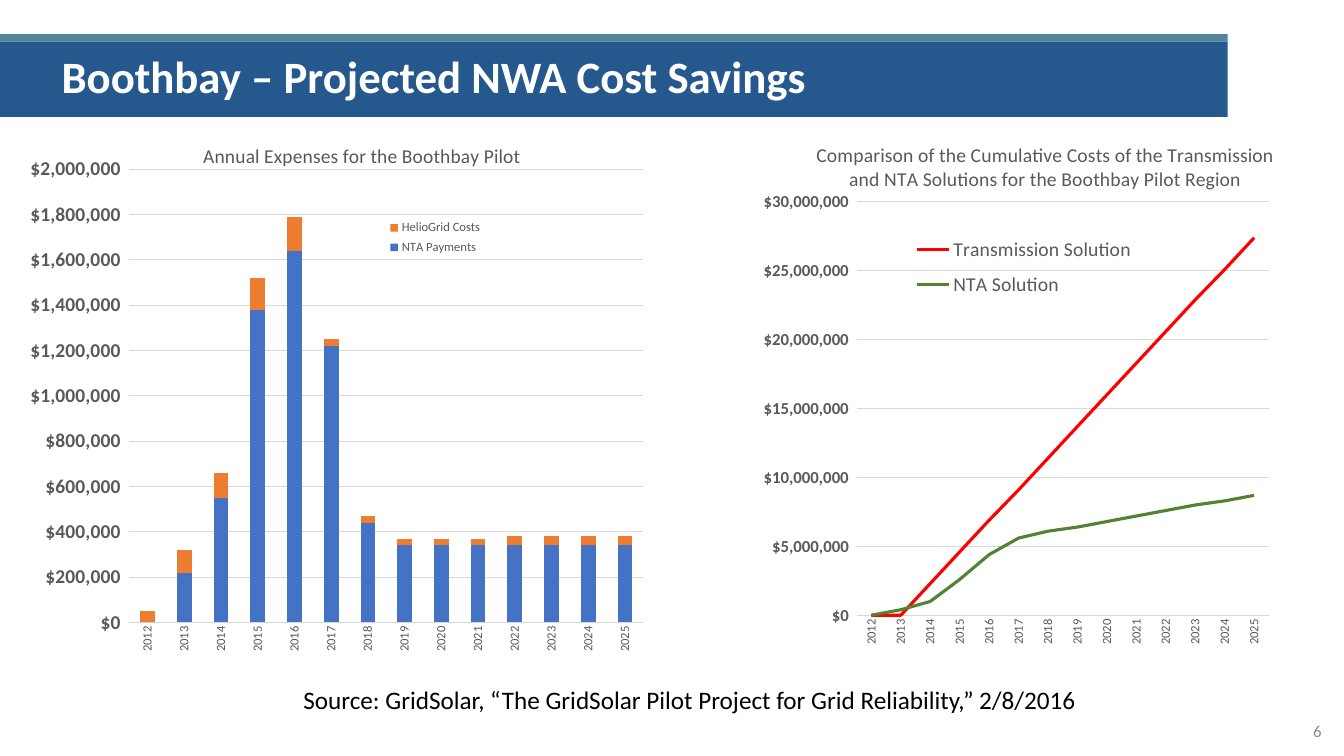
from pptx import Presentation
from pptx import util as u
from pptx.chart.data import CategoryChartData
from pptx.dml.color import RGBColor
from pptx.enum import chart as charts, shapes, text
from pptx.oxml import parse_xml
from pptx.oxml.ns import nsdecls

YEARS = [str(year) for year in range(2012, 2026)]
MONEY = '"$"#,##0_);[Red]\\("$"#,##0\\)'
GREY, RULE, WHITE, BLACK = "595959", "D9D9D9", "FFFFFF", "000000"


def color(value):
    return RGBColor.from_string(value)


class Deck:
    """Draws styled elements on the current slide, placed on a 100 by 100 grid."""

    face = "Calibri"

    def __init__(self, width, height):
        self.show = Presentation()
        self.show.slide_width, self.show.slide_height = u.Inches(width), u.Inches(height)
        self.slide = self.show.slides.add_slide(self.show.slide_layouts[5])

    def place(self, left, top, width, height):
        column, row = self.show.slide_width / 100, self.show.slide_height / 100
        return [round(n) for n in (left * column, top * row, width * column, height * row)]

    def style(self, font, size, tone, bold=False):
        font.name, font.size, font.bold = self.face, u.Pt(size), bold
        font.color.rgb = color(tone)

    def words(self, paragraph, wording, size, tone, bold=False):
        run = paragraph.add_run()
        run.text = wording
        self.style(run.font, size, tone, bold)

    def band(self, area, tone):
        band = self.slide.shapes.add_shape(shapes.MSO_SHAPE.RECTANGLE, *self.place(*area))
        band.shadow.inherit = False
        band.fill.solid()
        band.fill.fore_color.rgb = color(tone)
        band.line.fill.background()

    def heading(self, area, wording):
        heading = self.slide.shapes.title
        heading.left, heading.top, heading.width, heading.height = self.place(*area)
        frame = heading.text_frame
        frame.auto_size = text.MSO_AUTO_SIZE.NONE
        frame.vertical_anchor = text.MSO_ANCHOR.MIDDLE
        frame.paragraphs[0].alignment = text.PP_ALIGN.LEFT
        frame.paragraphs[0].line_spacing = 0.9
        self.words(frame.paragraphs[0], wording, 32, WHITE, True)
        heading.element.getparent().append(heading.element)

    def note(self, area, wording, size, tone, align=text.PP_ALIGN.LEFT, anchor=text.MSO_ANCHOR.TOP):
        frame = self.slide.shapes.add_textbox(*self.place(*area)).text_frame
        frame.word_wrap = True
        frame.vertical_anchor = anchor
        frame.paragraphs[0].alignment = align
        self.words(frame.paragraphs[0], wording, size, tone)

    def pin(self, chart, part, index, percents):
        parent = chart.element.xpath(f".//c:{part}")[0]
        for old in parent.xpath("./c:layout"):
            parent.remove(old)
        target = '<c:layoutTarget val="inner"/>' if part == "plotArea" else ""
        modes = '<c:xMode val="edge"/><c:yMode val="edge"/>'
        values = "".join(f'<c:{key} val="{percent / 100}"/>' for key, percent in zip("xywh", percents))
        parent.insert(index, parse_xml(
            f'<c:layout {nsdecls("c")}><c:manualLayout>{target}{modes}{values}'
            "</c:manualLayout></c:layout>"))

    def chart(self, kind, area, title, title_at, plot, legend, legend_size, axis, series):
        data = CategoryChartData(number_format=MONEY)
        data.categories = YEARS
        for name, tone, values in series:
            data.add_series(name, values)
        chart = self.slide.shapes.add_chart(kind, *self.place(*area), data).chart
        self.style(chart.font, 10, BLACK)

        chart.has_title = True
        frame = chart.chart_title.text_frame
        for number, wording in enumerate(title):
            line = frame.add_paragraph() if number else frame.paragraphs[0]
            self.words(line, wording, 14, GREY)
        chart.has_legend = True
        chart.legend.position = charts.XL_LEGEND_POSITION.RIGHT
        chart.legend.include_in_layout = False
        self.style(chart.legend.font, legend_size, GREY)
        self.pin(chart, "title", 1, title_at)
        self.pin(chart, "plotArea", 0, plot)
        self.pin(chart, "legend", 1, legend)

        top, step, size = axis
        years, dollars = chart.category_axis, chart.value_axis
        for scale in (years, dollars):
            scale.major_tick_mark = scale.minor_tick_mark = charts.XL_TICK_MARK.NONE
        dollars.minimum_scale, dollars.maximum_scale, dollars.major_unit = 0, top, step
        dollars.tick_labels.number_format = MONEY
        dollars.tick_labels.number_format_is_linked = False
        dollars.format.line.fill.background()
        self.style(dollars.tick_labels.font, size, GREY, True)
        self.style(years.tick_labels.font, 9, GREY)
        chart.element.xpath(".//c:catAx/c:txPr/a:bodyPr")[0].set("rot", "-5400000")
        for rule in (years.format.line, dollars.major_gridlines.format.line):
            rule.color.rgb, rule.width = color(RULE), u.Pt(0.75)

        drawn = chart.plots[0]
        drawn.vary_by_categories = False
        if kind == charts.XL_CHART_TYPE.COLUMN_STACKED:
            drawn.gap_width, drawn.overlap = 150, 100
        for item, (name, tone, values) in zip(drawn.series, series):
            if kind == charts.XL_CHART_TYPE.LINE:
                item.smooth = False
                item.format.line.color.rgb, item.format.line.width = color(tone), u.Pt(2.25)
            else:
                item.format.fill.solid()
                item.format.fill.fore_color.rgb = color(tone)


def main():
    deck = Deck(13.33, 7.5)
    deck.band((0, 5.47, 91.35, 10), "25598D")
    deck.band((0, 4.53, 91.35, 0.93), "52849E")
    deck.heading((3.83, 5.47, 84, 10), "Boothbay – Projected NWA Cost Savings")
    deck.note((76.58, 94, 22.5, 5.33), "6", 12, "8C8C8C",
              text.PP_ALIGN.RIGHT, text.MSO_ANCHOR.MIDDLE)

    payments = [0, 220000, 550000, 1380000, 1640000, 1220000, 440000] + [340000] * 7
    costs = [50000, 100000, 110000, 140000, 150000] + [30000] * 5 + [40000] * 4
    deck.chart(
        charts.XL_CHART_TYPE.COLUMN_STACKED, (2.25, 15.47, 48, 72.53),
        ["Annual Expenses for the Boothbay Pilot"], (25.7, 4),
        (14.7, 9.5, 80.3, 82.7), (54, 18, 17, 8), 9, (2000000, 200000, 14),
        [("NTA Payments", "4472C4", payments), ("HelioGrid Costs", "ED7D31", costs)])

    transmission = [0, 0, 2300000, 4600000, 6900000, 9100000, 11400000, 13700000,
                    16000000, 18300000, 20600000, 22900000, 25100000, 27400000]
    alternative = [0, 400000, 1000000, 2600000, 4400000, 5600000, 6100000, 6400000,
                   6800000, 7200000, 7600000, 8000000, 8300000, 8700000]
    deck.chart(
        charts.XL_CHART_TYPE.LINE, (55.13, 15.47, 44.85, 72.13),
        ["Comparison of the Cumulative Costs of the Transmission",
         "and NTA Solutions for the Boothbay Pilot Region"], (12, 4),
        (19.2, 15.6, 68.4, 75.8), (28, 20, 38, 15), 14, (30000000, 5000000, 12),
        [("Transmission Solution", "FF0000", transmission),
         ("NTA Solution", "548235", alternative)])

    deck.note((21.83, 89.87, 60.45, 5.33),
              "Source: GridSolar, “The GridSolar Pilot Project for Grid Reliability,” 2/8/2016",
              18, BLACK)
    deck.show.save("out.pptx")


if __name__ == "__main__":
    main()
